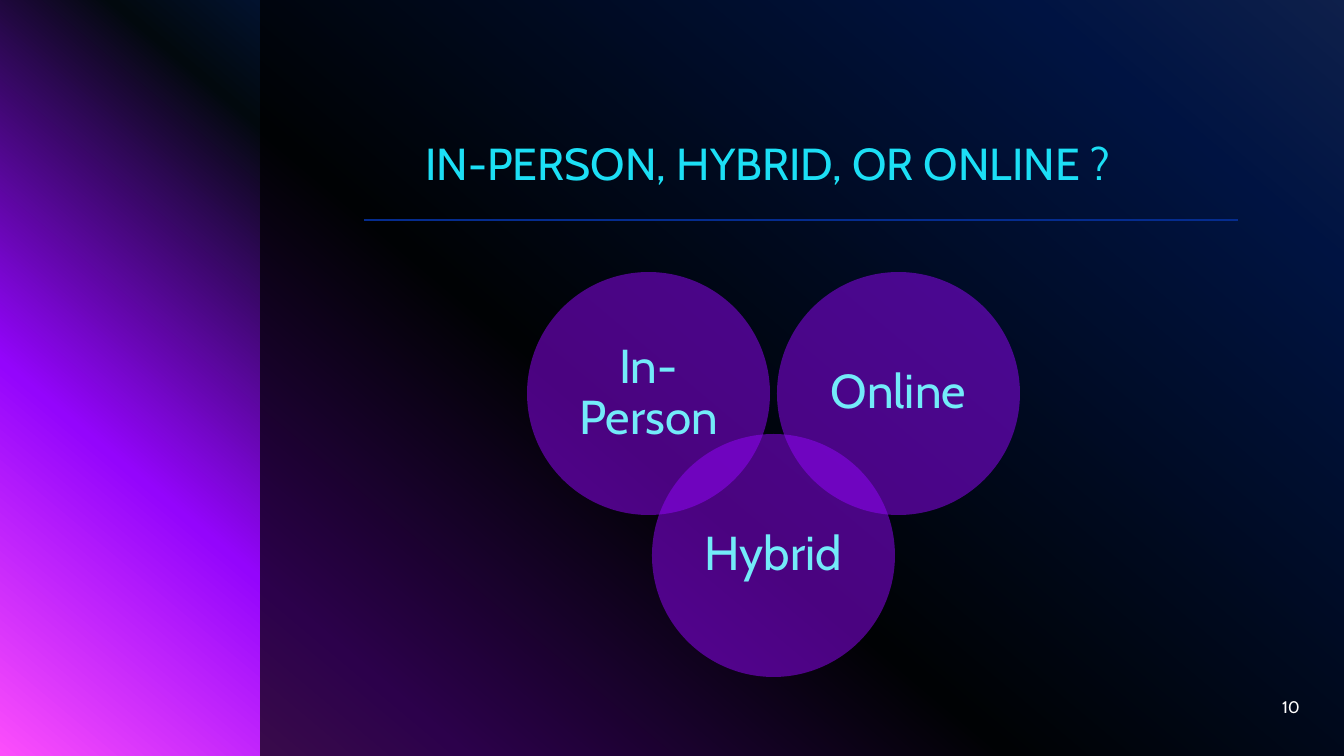
import pptx
import pptx.util
import pptx.dml.color
import pptx.enum.shapes
import pptx.enum.text
import pptx.oxml
import pptx.oxml.ns
from dataclasses import dataclass

TITLE = "IN-PERSON, HYBRID, OR ONLINE ?"
FORMATS = [("In-Person", 0, 0), ("Hybrid", 1, 1), ("Online", 2, 0)]  # label, column, row
PAGE_NUMBER = "10"

EMU_PER_PX = 914400 / 100.8
SLIDE_W, SLIDE_H = 1344, 756
PANEL_LEFT = 260
TITLE_BOX = (364, 12, 818, 183)
RULE_LEFT, RULE_RIGHT, RULE_Y = 364, 1238, 220
NUMBER_BOX = (1008, 687, 302, 40)
CIRCLES_LEFT, CIRCLES_TOP, DIAMETER = 527, 272, 243
COLUMN_STEP, ROW_STEP = 125, 162
CIRCLE_INSET = 14


@dataclass(frozen=True)
class Theme:
    font: str = "Cabin"
    title_size: int = 32
    label_size: int = 34
    number_size: int = 12
    title: str = "1CDFF5"
    label: str = "73EBF9"
    number: str = "FFFFFF"
    rule: str = "052C8E"
    panel: str = "000000"
    panel_opacity: int = 70
    circle: str = "9405FC"
    circle_opacity: int = 50
    backdrop: tuple = ((0, "316CFC"), (14, "0343DF"), (55, "02090E"),
                       (79, "9405FC"), (100, "FC4EFB"))
    backdrop_angle: int = 230


THEME = Theme()
ALIGN = pptx.enum.text.PP_ALIGN
ANCHOR = pptx.enum.text.MSO_ANCHOR
SHAPE = pptx.enum.shapes.MSO_SHAPE
qn = pptx.oxml.ns.qn


def px(length):
    return pptx.util.Emu(round(length * EMU_PER_PX))


def rgb(code):
    return pptx.dml.color.RGBColor.from_string(code)


def add_child(parent, tag, **attributes):
    child = parent.makeelement(qn(tag), attributes)
    parent.append(child)
    return child


def paint_backdrop(slide):
    fill = slide.background.fill
    fill.gradient()
    fill.gradient_angle = THEME.backdrop_angle
    stops = slide.element.find(".//" + qn("a:gsLst"))
    for stop in list(stops):
        stops.remove(stop)
    for percent, color in THEME.backdrop:
        stop = add_child(stops, "a:gs", pos=str(percent * 1000))
        add_child(stop, "a:srgbClr", val=color)


def add_veil(slide, preset, box, color, opacity):
    """Add a borderless, partly transparent shape."""
    veil = slide.shapes.add_shape(preset, *map(px, box))
    veil.shadow.inherit = False
    veil.line.fill.background()
    veil.fill.solid()
    veil.fill.fore_color.rgb = rgb(color)
    tint = veil.element.spPr.find(".//" + qn("a:srgbClr"))
    add_child(tint, "a:alpha", val=str(opacity * 1000))
    return veil


def write(shape, text, size, color, align, anchor, insets, spacing=1.0):
    """Fill a shape with one paragraph; insets are left, top, right, bottom."""
    frame = shape.text_frame
    frame.word_wrap = True
    frame.vertical_anchor = anchor
    (frame.margin_left, frame.margin_top,
     frame.margin_right, frame.margin_bottom) = map(px, insets)
    paragraph = frame.paragraphs[0]
    paragraph.text = text
    paragraph.alignment = align
    paragraph.line_spacing = spacing
    paragraph.font.name = THEME.font
    paragraph.font.size = pptx.util.Pt(size)
    paragraph.font.color.rgb = rgb(color)


def add_rule(slide):
    rule = slide.shapes.add_connector(
        pptx.enum.shapes.MSO_CONNECTOR.STRAIGHT,
        px(RULE_LEFT), px(RULE_Y), px(RULE_RIGHT), px(RULE_Y))
    rule.line.color.rgb = rgb(THEME.rule)
    rule.line.width = pptx.util.Pt(2)
    add_child(rule.element.spPr, "a:effectLst")


def main():
    deck = pptx.Presentation()
    deck.slide_width, deck.slide_height = px(SLIDE_W), px(SLIDE_H)
    slide = deck.slides.add_slide(deck.slide_layouts[6])

    paint_backdrop(slide)
    add_veil(slide, SHAPE.RECTANGLE, (PANEL_LEFT, 0, SLIDE_W - PANEL_LEFT, SLIDE_H),
             THEME.panel, THEME.panel_opacity)
    add_rule(slide)

    title = slide.shapes.add_textbox(*map(px, TITLE_BOX))
    write(title, TITLE, THEME.title_size, THEME.title, ALIGN.CENTER,
          ANCHOR.BOTTOM, (0, 5, 10, 5), 0.9)
    number = slide.shapes.add_textbox(*map(px, NUMBER_BOX))
    write(number, PAGE_NUMBER, THEME.number_size, THEME.number, ALIGN.RIGHT,
          ANCHOR.MIDDLE, (10, 5, 10, 5))

    for label, column, row in FORMATS:
        box = (CIRCLES_LEFT + column * COLUMN_STEP, CIRCLES_TOP + row * ROW_STEP,
               DIAMETER, DIAMETER)
        circle = add_veil(slide, SHAPE.OVAL, box, THEME.circle, THEME.circle_opacity)
        write(circle, label, THEME.label_size, THEME.label, ALIGN.CENTER,
              ANCHOR.MIDDLE, (CIRCLE_INSET,) * 4, 0.9)

    deck.save("out.pptx")


if __name__ == "__main__":
    main()
